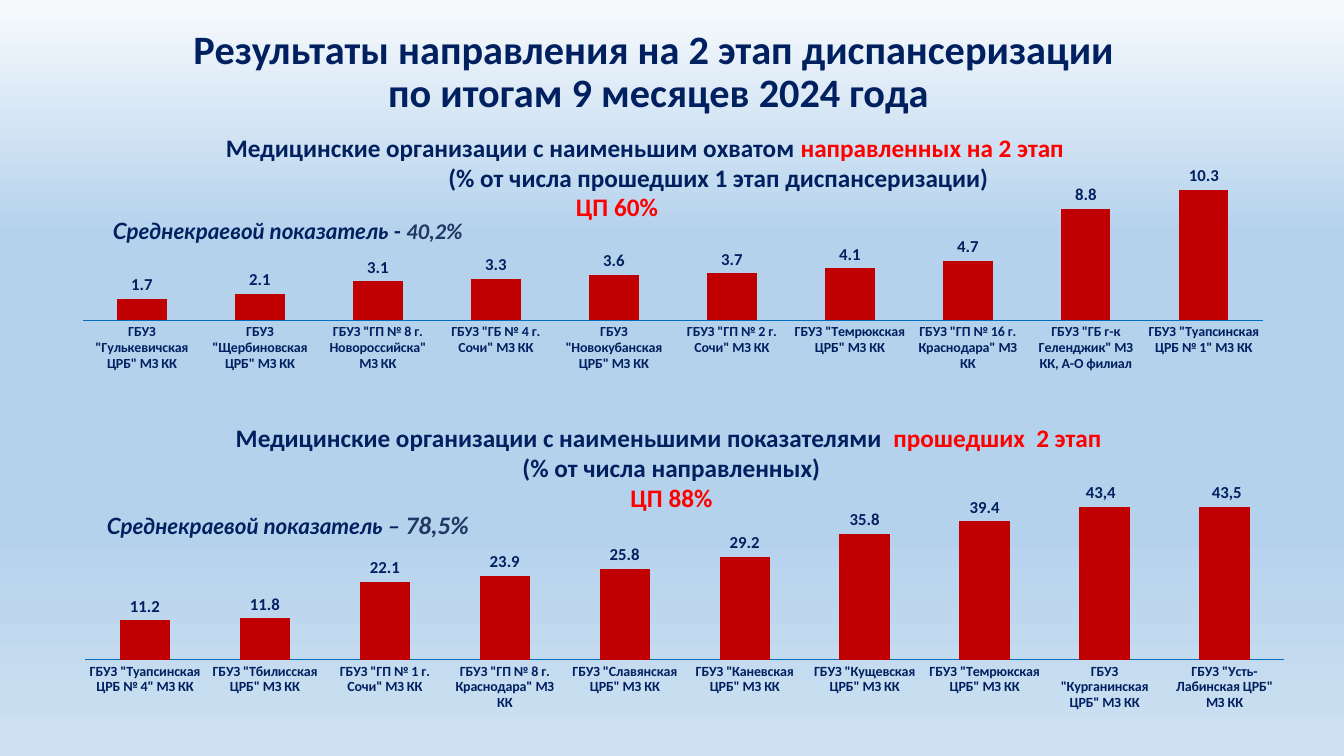
from lxml import etree
from pptx import Presentation
from pptx import util as u
from pptx.chart.data import CategoryChartData
from pptx.dml.color import RGBColor
from pptx.enum import chart as ch, text as tx
from pptx.oxml.ns import qn

NAVY = RGBColor(0x00, 0x20, 0x60)
SLATE = RGBColor(0x20, 0x38, 0x64)
RED = RGBColor(0xFF, 0x00, 0x00)
BAR_RED = RGBColor(0xC0, 0x00, 0x00)
AXIS_BLUE = RGBColor(0x00, 0x70, 0xC0)
BLACK = RGBColor(0x00, 0x00, 0x00)
ICE = RGBColor(0xF7, 0xFA, 0xFD)
SKY = RGBColor(0xB5, 0xD2, 0xEC)
MIST = RGBColor(0xCE, 0xE1, 0xF2)
BACKDROP = [(0, ICE), (31, SKY), (70, SKY), (100, MIST)]

SCALE = 914400 / 100.8
WIDTH, HEIGHT = 1344, 756
CENTER = tx.PP_ALIGN.CENTER
LEFT = tx.PP_ALIGN.LEFT

REFERRED = [
    ('ГБУЗ "Гулькевичская ЦРБ" МЗ КК', 1.7),
    ('ГБУЗ "Щербиновская ЦРБ" МЗ КК', 2.1),
    ('ГБУЗ "ГП № 8 г. Новороссийска" МЗ КК', 3.1),
    ('ГБУЗ "ГБ № 4 г. Сочи" МЗ КК', 3.3),
    ('ГБУЗ "Новокубанская ЦРБ" МЗ КК', 3.6),
    ('ГБУЗ "ГП № 2 г. Сочи" МЗ КК', 3.7),
    ('ГБУЗ "Темрюкская ЦРБ" МЗ КК', 4.1),
    ('ГБУЗ "ГП № 16 г. Краснодара" МЗ КК', 4.7),
    ('ГБУЗ "ГБ г-к Геленджик" МЗ КК, А-О филиал', 8.8),
    ('ГБУЗ "Туапсинская ЦРБ № 1" МЗ КК', 10.3),
]
COMPLETED = [
    ('ГБУЗ "Туапсинская ЦРБ № 4" МЗ КК', 11.2),
    ('ГБУЗ "Тбилисская ЦРБ" МЗ КК', 11.8),
    ('ГБУЗ "ГП № 1 г. Сочи" МЗ КК', 22.1),
    ('ГБУЗ "ГП № 8 г. Краснодара" МЗ КК', 23.9),
    ('ГБУЗ "Славянская ЦРБ" МЗ КК', 25.8),
    ('ГБУЗ "Каневская ЦРБ" МЗ КК', 29.2),
    ('ГБУЗ "Кущевская ЦРБ" МЗ КК', 35.8),
    ('ГБУЗ "Темрюкская ЦРБ" МЗ КК', 39.4),
    ('ГБУЗ "Курганинская ЦРБ" МЗ КК', 43.4),
    ('ГБУЗ "Усть-Лабинская ЦРБ" МЗ КК', 43.5),
]


def px(length):
    return u.Emu(round(length * SCALE))


def style(font, size, color, bold=True, face="Calibri"):
    font.size, font.bold, font.name = u.Pt(size), bold, face
    font.color.rgb = color


def add_text(slide, box, paragraphs, wrap=True):
    caption = slide.shapes.add_textbox(*map(px, box))
    frame = caption.text_frame
    frame.word_wrap = wrap
    frame.auto_size = tx.MSO_AUTO_SIZE.SHAPE_TO_FIT_TEXT
    frame.text = "\n".join("" for _ in paragraphs)
    for paragraph, (align, pieces) in zip(frame.paragraphs, paragraphs):
        paragraph.alignment = align
        for wording, size, color, *face in pieces:
            run = paragraph.add_run()
            run.text = wording
            style(run.font, size, color, True, *face)
            run.font.italic = True if face else None
    return frame


def paint_background(slide):
    fill = slide.background.fill
    fill.gradient()
    fill.gradient_angle = 270
    stops = slide.element.find(".//" + qn("a:gsLst"))
    for stop in list(stops):
        stops.remove(stop)
    for position, color in BACKDROP:
        stop = etree.SubElement(stops, qn("a:gs"), pos=str(position * 1000))
        etree.SubElement(stop, qn("a:srgbClr"), val=str(color))


def add_title(slide, box):
    frame = add_text(slide, box, [
        (CENTER, [("Результаты направления на 2 этап диспансеризации", 28.8, NAVY)]),
        (CENTER, [(" по итогам 9 месяцев 2024 года", 28.8, NAVY)])])
    frame.auto_size = tx.MSO_AUTO_SIZE.NONE
    frame.vertical_anchor = tx.MSO_ANCHOR.MIDDLE
    for line in frame.paragraphs:
        line.line_spacing = 0.9


def add_columns(slide, box, clinics, top_value, plot_left, unlabelled=()):
    data = CategoryChartData(number_format="0.0")
    data.categories = [name for name, _ in clinics]
    data.add_series("Series 1", [share for _, share in clinics])
    chart = slide.shapes.add_chart(
        ch.XL_CHART_TYPE.COLUMN_CLUSTERED, *map(px, box), data).chart
    chart.has_legend = chart.has_title = False
    style(chart.font, 10, BLACK, False)

    shares = chart.value_axis
    shares.minimum_scale, shares.maximum_scale = 0, top_value
    shares.has_major_gridlines = False
    shares.visible = False
    names = chart.category_axis
    names.major_tick_mark = names.minor_tick_mark = ch.XL_TICK_MARK.NONE
    names.format.line.color.rgb = AXIS_BLUE
    names.format.line.width = u.Pt(0.75)
    style(names.tick_labels.font, 10, NAVY)
    names_body = chart.element.find(".//" + qn("c:catAx")).find(".//" + qn("a:bodyPr"))
    names_body.set("rot", "0")
    names_body.set("vert", "horz")

    plot = chart.plots[0]
    plot.gap_width, plot.overlap, plot.vary_by_categories = 139, -27, False
    bars = plot.series[0]
    bars.format.fill.solid()
    bars.format.fill.fore_color.rgb = BAR_RED
    labels = bars.data_labels
    labels.show_value = True
    labels.number_format, labels.number_format_is_linked = "0.0", False
    labels.position = ch.XL_LABEL_POSITION.OUTSIDE_END
    style(labels.font, 12, NAVY)

    series_labels = chart.element.find(".//" + qn("c:ser")).find(qn("c:dLbls"))
    for order, index in enumerate(unlabelled):
        label = etree.Element(qn("c:dLbl"))
        etree.SubElement(label, qn("c:idx"), val=str(index))
        etree.SubElement(label, qn("c:delete"), val="1")
        series_labels.insert(order, label)

    area = chart.element.find(".//" + qn("c:plotArea"))
    for layout in area.findall(qn("c:layout")):
        area.remove(layout)
    layout = etree.Element(qn("c:layout"))
    area.insert(0, layout)
    manual = etree.SubElement(layout, qn("c:manualLayout"))
    for tag, value in [("layoutTarget", "inner"), ("xMode", "edge"), ("yMode", "edge"),
                       ("x", plot_left / box[2]), ("y", 0), ("w", 0.98), ("h", 0.63)]:
        etree.SubElement(manual, qn("c:" + tag), val=str(value))


def add_referred(slide, box):
    x, y, width, height = box
    add_columns(slide, (x, y + 39, width, height - 39), REFERRED, 12, 19)
    add_text(slide, (x + 152, y, 1005, 72), [
        (LEFT, [("Медицинские организации с наименьшим охватом ", 18, NAVY),
                ("направленных на 2 этап", 18, RED)]),
        (CENTER, [("(% от числа прошедших 1 этап диспансеризации)", 18, NAVY)])])
    add_text(slide, (x + 502, y + 59, 104, 40), [(LEFT, [("ЦП 60%", 18, RED)])], False)
    add_text(slide, (x + 39, y + 85, 405, 37), [
        (LEFT, [("Среднекраевой показатель - ", 16, NAVY, "Lato"),
                ("40,2%", 16, SLATE, "Calibri")])], False)


def add_completed(slide, box):
    x, y, width, height = box
    add_columns(slide, (x, y + 67, width, height - 67), COMPLETED, 50, 14, (8, 9))
    add_text(slide, (x + 98, y, 1005, 105), [
        (CENTER, [("Медицинские организации с наименьшими показателями  ", 18, NAVY),
                  ("прошедших  2 этап ", 18, RED)]),
        (CENTER, [("(% от числа направленных)", 18, NAVY)]),
        (CENTER, [("ЦП 88%", 18, RED)])])
    for offset, share in [(1131, "43,5"), (1005, "43,4")]:
        add_text(slide, (x + offset, y + 60, 50, 30), [(LEFT, [(share, 12, NAVY)])], False)
    add_text(slide, (x + 26, y + 87, 439, 40), [
        (LEFT, [("Среднекраевой показатель – ", 16, NAVY, "Lato"),
                ("78,5%", 18, SLATE, "Calibri")])])


def main():
    deck = Presentation()
    deck.slide_width, deck.slide_height = px(WIDTH), px(HEIGHT)
    slide = deck.slides.add_slide(deck.slide_layouts[6])
    paint_background(slide)
    add_title(slide, (17, 16, 1274, 114))
    add_referred(slide, (64, 127, 1204, 283))
    add_completed(slide, (71, 417, 1224, 346))
    deck.save("out.pptx")


if __name__ == "__main__":
    main()
